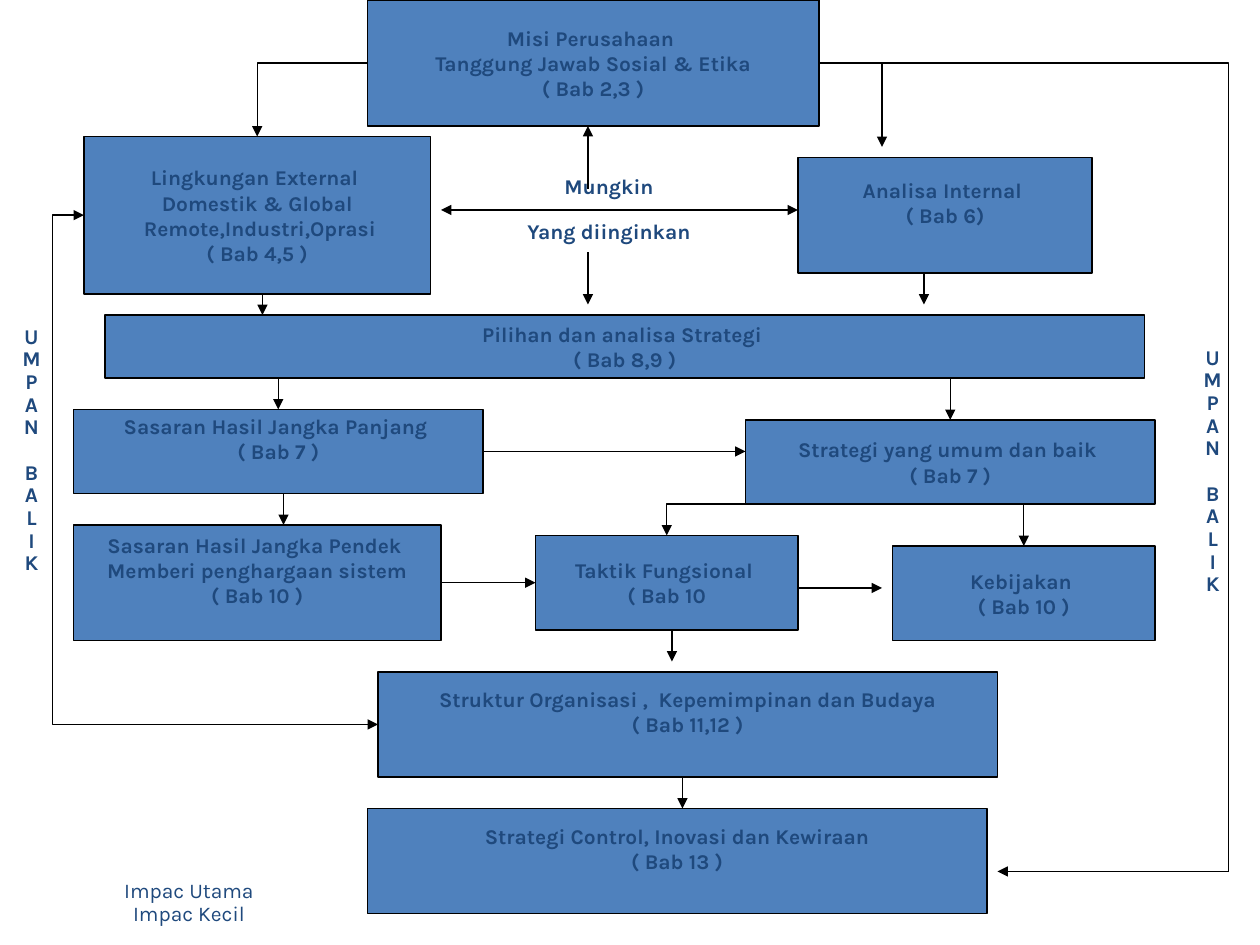
from pptx import Presentation
from pptx.dml.color import RGBColor
from pptx.enum.shapes import MSO_CONNECTOR as Connector, MSO_SHAPE as Shape
from pptx.enum.text import MSO_ANCHOR as Anchor, PP_ALIGN as Align
from pptx.oxml.ns import qn
from pptx.util import Inches, Pt
from lxml import etree

COLORS = {"box": "4F81BD", "line": "000000", "text": "1F497D"}
COLUMNS, ROWS = 120, 90

presentation = Presentation()
presentation.slide_width, presentation.slide_height = Inches(10), Inches(7.5)
slide = presentation.slides.add_slide(presentation.slide_layouts[6])
column = presentation.slide_width / COLUMNS
row = presentation.slide_height / ROWS


def write(shape, text, bold=True, wrap=True, spacing=None, gap=0, lift=0):
    """Centred text; gap goes before later paragraphs, lift shifts it up."""
    frame = shape.text_frame
    frame.text = text
    frame.word_wrap = wrap
    frame.vertical_anchor = Anchor.MIDDLE
    frame.margin_top, frame.margin_bottom = 0, Inches(lift)
    for index, paragraph in enumerate(frame.paragraphs):
        paragraph.alignment = Align.CENTER
        paragraph.line_spacing = spacing
        if gap and index:
            paragraph.space_before = Pt(gap)
        font = paragraph.font
        font.name, font.size, font.bold = "Karla", Pt(12), bold
        font.color.rgb = RGBColor.from_string(COLORS["text"])


def connect(kind, start, end, ends="tail", preset=None, adjust=None, turn=0):
    """Connector between two grid points, with arrowheads at the named ends."""
    (x1, y1), (x2, y2) = start, end
    line = slide.shapes.add_connector(
        kind, round(x1 * column), round(y1 * row), round(x2 * column), round(y2 * row))
    line.line.color.rgb = RGBColor.from_string(COLORS["line"])
    line.line.width = Pt(0.75)
    properties = line._element.spPr
    for name in ends.split():
        etree.SubElement(line.line._get_or_add_ln(), qn(f"a:{name}End"), type="triangle")
    etree.SubElement(properties, qn("a:effectLst"))
    geometry = properties.find(qn("a:prstGeom"))
    if preset:
        geometry.set("prst", preset)
    if adjust is not None:
        guides = geometry.find(qn("a:avLst"))
        etree.SubElement(guides, qn("a:gd"), name="adj1", fmla=f"val {round(adjust * 100000)}")
    if turn:
        properties.find(qn("a:xfrm")).set("rot", str(turn * 60000))
    return line


# Arrow from the mission to the internal analysis, behind the boxes
connect(Connector.ELBOW, (76, 6), (84, 14), "head tail", "bentConnector2")

# Boxes: left, top, width, height in grid units, upward text shift, text
boxes = {
    "mission": (35, 0, 43, 12, 0,
                "Misi Perusahaan \vTanggung Jawab Sosial & Etika\v( Bab 2,3 )"),
    "external": (8, 13, 33, 15, 0,
                 "Lingkungan External \vDomestik & Global\n Remote,Industri,Oprasi\v( Bab 4,5 )"),
    "long term": (7, 39, 39, 8, 0.2, "Sasaran Hasil Jangka Panjang \v( Bab 7 )"),
    "choice": (10, 30, 99, 6, 0, "Pilihan dan analisa Strategi \v( Bab 8,9 )"),
    "internal": (76, 15, 28, 11, 0.2, "Analisa Internal \v( Bab 6)"),
    "strategy": (71, 40, 39, 8, 0, "Strategi yang umum dan baik \v( Bab 7 )"),
    "short term": (7, 50, 35, 11, 0.2,
                   "Sasaran Hasil Jangka Pendek \nMemberi penghargaan sistem\v( Bab 10 )"),
    "tactics": (51, 51, 25, 9, 0, "Taktik Fungsional \v( Bab 10"),
    "policy": (85, 52, 25, 9, 0, "Kebijakan \v( Bab 10 )"),
    "structure": (36, 64, 59, 10, 0.2,
                  "Struktur Organisasi ,  Kepemimpinan dan Budaya\n( Bab 11,12 )"),
    "control": (35, 77, 59, 10, 0.2,
                "Strategi Control, Inovasi dan Kewiraan\n( Bab 13 )"),
}
shapes = {}
for name, (left, top, width, height, lift, text) in boxes.items():
    shape = slide.shapes.add_shape(
        Shape.RECTANGLE, round(left * column), round(top * row),
        round(width * column), round(height * row))
    shape.shadow.inherit = False
    shape.fill.solid()
    shape.fill.fore_color.rgb = RGBColor.from_string(COLORS["box"])
    shape.line.color.rgb = RGBColor.from_string(COLORS["line"])
    shape.line.width = Pt(0.75)
    write(shape, text, wrap=False, lift=lift)
    shapes[name] = shape

# Bent lines: mission to environment, and the two feedback loops
connect(Connector.ELBOW, (35, 6), (24.5, 13), "tail", "bentConnector2")
connect(Connector.ELBOW, (78, 6), (117, 83), "", "bentConnector2")
connect(Connector.ELBOW, (36, 69), (8, 20.5), "head tail", adjust=1.107)

# Forks: a quarter turn makes them leave upwards, three rows above the start
for (x1, y1), (x2, y2) in [((26.5, 39), (90.5, 40)), ((63.5, 51), (97.5, 52))]:
    middle_x, middle_y = (x1 + x2) / 2, (y1 + y2) / 2
    half_width, half_height = (x2 - x1) / 2, (y2 - y1) / 2
    connect(Connector.ELBOW,
            (middle_x - half_height, middle_y + half_width),
            (middle_x + half_height, middle_y - half_width),
            "head tail", adjust=-3, turn=90)

# Straight arrows
for start, end in [
    ((117, 83), (95, 83)), ((88, 26), (88, 29)), ((25, 28), (25, 30)),
    ((27, 47), (27, 50)), ((76, 56), (84, 56)), ((64, 60), (64, 63)),
    ((65, 74), (65, 77)), ((56, 18), (56, 12)), ((56, 24), (56, 29)),
]:
    connect(Connector.STRAIGHT, start, end)
connect(Connector.STRAIGHT, (42, 20), (76, 20), "head tail")

# Arrows joined to the middle of a box side
to_strategy = connect(Connector.STRAIGHT, (46, 43), (71, 43))
to_strategy.begin_connect(shapes["long term"], 3)
to_tactics = connect(Connector.STRAIGHT, (42, 55.5), (51, 55.5))
to_tactics.begin_connect(shapes["short term"], 3)
to_tactics.end_connect(shapes["tactics"], 1)

# Free labels: left, top, width, height, bold, gap, upward shift, text
feedback = "\n".join("\v".join(word) for word in ("UMPAN", "BALIK"))
for left, top, width, height, bold, gap, lift, text in [
    (0, 82, 36, 8, False, 0, 0, "Impac Utama\vImpac Kecil"),
    (40, 16, 36, 8, True, 13, 0, "Mungkin\nYang diinginkan"),
    (107, 38, 17, 16, True, 13, 0.18, feedback),
    (0, 36, 6, 16, True, 13, 0.18, feedback),
]:
    label = slide.shapes.add_textbox(
        round(left * column), round(top * row), round(width * column), round(height * row))
    write(label, text, bold=bold, spacing=0.9, gap=gap, lift=lift)

presentation.save("out.pptx")
